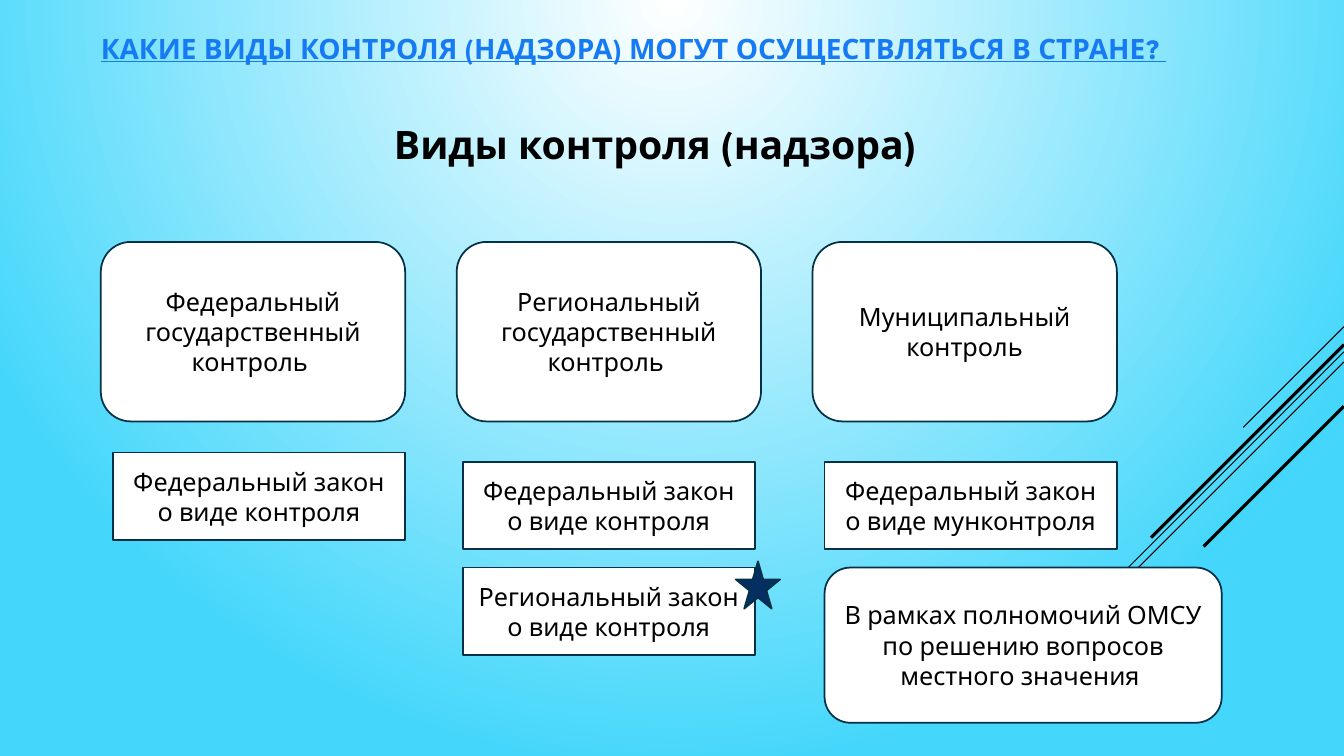
from dataclasses import dataclass

from lxml import etree
from pptx import Presentation
from pptx.dml.color import RGBColor
from pptx.enum.shapes import MSO_CONNECTOR, MSO_SHAPE
from pptx.enum.text import MSO_ANCHOR, PP_ALIGN
from pptx.oxml.ns import qn
from pptx.util import Pt

ROUNDED, RECTANGLE = MSO_SHAPE.ROUNDED_RECTANGLE, MSO_SHAPE.RECTANGLE
STAR, STRAIGHT = MSO_SHAPE.STAR_5_POINT, MSO_CONNECTOR.STRAIGHT
TOP, MIDDLE, BOTTOM = MSO_ANCHOR.TOP, MSO_ANCHOR.MIDDLE, MSO_ANCHOR.BOTTOM
LEFT, CENTER = PP_ALIGN.LEFT, PP_ALIGN.CENTER

# Content
TITLE = "КАКИЕ ВИДЫ КОНТРОЛЯ (НАДЗОРА) МОГУТ ОСУЩЕСТВЛЯТЬСЯ В СТРАНЕ? "
SUBTITLE = "Виды контроля (надзора)"
KINDS = [
    "Федеральный государственный контроль ",
    "Региональный государственный контроль ",
    "Муниципальный контроль",
]
LAWS = [  # text, left, top
    ("Федеральный закон о виде контроля", 80.6, 323.3),
    ("Региональный закон о виде контроля", 330.5, 405.4),
    ("Федеральный закон о виде контроля", 330.5, 329.8),
    ("Федеральный закон о виде мунконтроля", 589, 329.8),
]
POWERS = "В рамках полномочий ОМСУ по решению вопросов местного значения "
DIAGONALS = [  # top at the right edge, run, weight
    (233.3, 72, 0.75),
    (251.3, 234.7, 0.75),
    (258.5, 149.4, 0.75),
    (246.2, 137.8, 2.25),
    (290.2, 100.2, 2.25),
]


@dataclass(frozen=True)
class Theme:
    font: str = "League Spartan"
    white: RGBColor = RGBColor(0xFF, 0xFF, 0xFF)
    sky: RGBColor = RGBColor(0x45, 0xD7, 0xFB)
    black: RGBColor = RGBColor(0, 0, 0)
    link: RGBColor = RGBColor(0x16, 0x7B, 0xF3)
    outline: RGBColor = RGBColor(0x04, 0x31, 0x48)
    navy: RGBColor = RGBColor(0x05, 0x2F, 0x61)
    title_size: int = 20
    subtitle_size: int = 28
    body_size: int = 18
    border: float = 1.25


THEME = Theme()
WIDTH, HEIGHT = 960, 540
KIND_LEFT, KIND_STEP = 72, 254.2


def points(*lengths):
    return [Pt(length) for length in lengths]


def write(box, text, size, color=THEME.black, bold=False, align=CENTER, anchor=MIDDLE):
    frame = box.text_frame
    frame.word_wrap = True
    frame.vertical_anchor = anchor
    para = frame.paragraphs[0]
    para.text = text
    para.alignment = align
    font = para.font
    font.name, font.size, font.bold = THEME.font, Pt(size), bold
    font.color.rgb = color
    return para


def add_box(page, kind, place, text="", fill=THEME.white):
    box = page.shapes.add_shape(kind, *points(*place))
    box.shadow.inherit = False
    box.fill.solid()
    box.fill.fore_color.rgb = fill
    box.line.color.rgb = THEME.outline
    box.line.width = Pt(THEME.border)
    if text:
        write(box, text, THEME.body_size)


def paint_background(page):
    fill = page.background.fill
    fill.gradient()
    for stop, color in zip(fill.gradient_stops, (THEME.white, THEME.sky)):
        stop.color.rgb = color
    gradient = next(page.element.iter(qn("a:gradFill")))
    gradient.remove(gradient.find(qn("a:lin")))
    circle = etree.SubElement(gradient, qn("a:path"), path="circle")
    etree.SubElement(circle, qn("a:fillToRect"), b="100000")


def add_diagonal(page, top, run, weight):
    ends = points(WIDTH, top, WIDTH - run, top + run)
    line = page.shapes.add_connector(STRAIGHT, *ends)
    line.line.color.rgb = THEME.black
    line.line.width = Pt(weight)
    etree.SubElement(line._element.spPr, qn("a:effectLst"))


def main():
    deck = Presentation()
    deck.slide_width, deck.slide_height = points(WIDTH, HEIGHT)
    page = deck.slides.add_slide(deck.slide_layouts[5])
    paint_background(page)

    # Diagonal lines at the right edge
    for diagonal in DIAGONALS:
        add_diagonal(page, *diagonal)

    # Title and subtitle
    title = page.shapes.title
    title.left, title.top, title.width, title.height = points(64.8, 21.6, 800, 24.5)
    para = write(title, TITLE, THEME.title_size, THEME.link, True, LEFT, TOP)
    para.font.underline = True
    para.line_spacing = 0.9
    subtitle = page.shapes.add_textbox(*points(72, 68.4, 792, 54.7))
    write(subtitle, SUBTITLE, THEME.subtitle_size, bold=True, anchor=BOTTOM)

    # Kinds of control
    for column, kind in enumerate(KINDS):
        left = KIND_LEFT + column * KIND_STEP
        add_box(page, ROUNDED, (left, 172.8, 217.4, 128.2), kind)

    # Laws under each kind
    for law, left, top in LAWS:
        add_box(page, RECTANGLE, (left, top, 208.8, 62.6), law)

    # Star mark and municipal powers
    add_box(page, STAR, (525.6, 401, 31.7, 33.8), fill=THEME.navy)
    add_box(page, ROUNDED, (589, 405.4, 283.7, 110.9), POWERS)

    deck.save("out.pptx")


if __name__ == "__main__":
    main()
